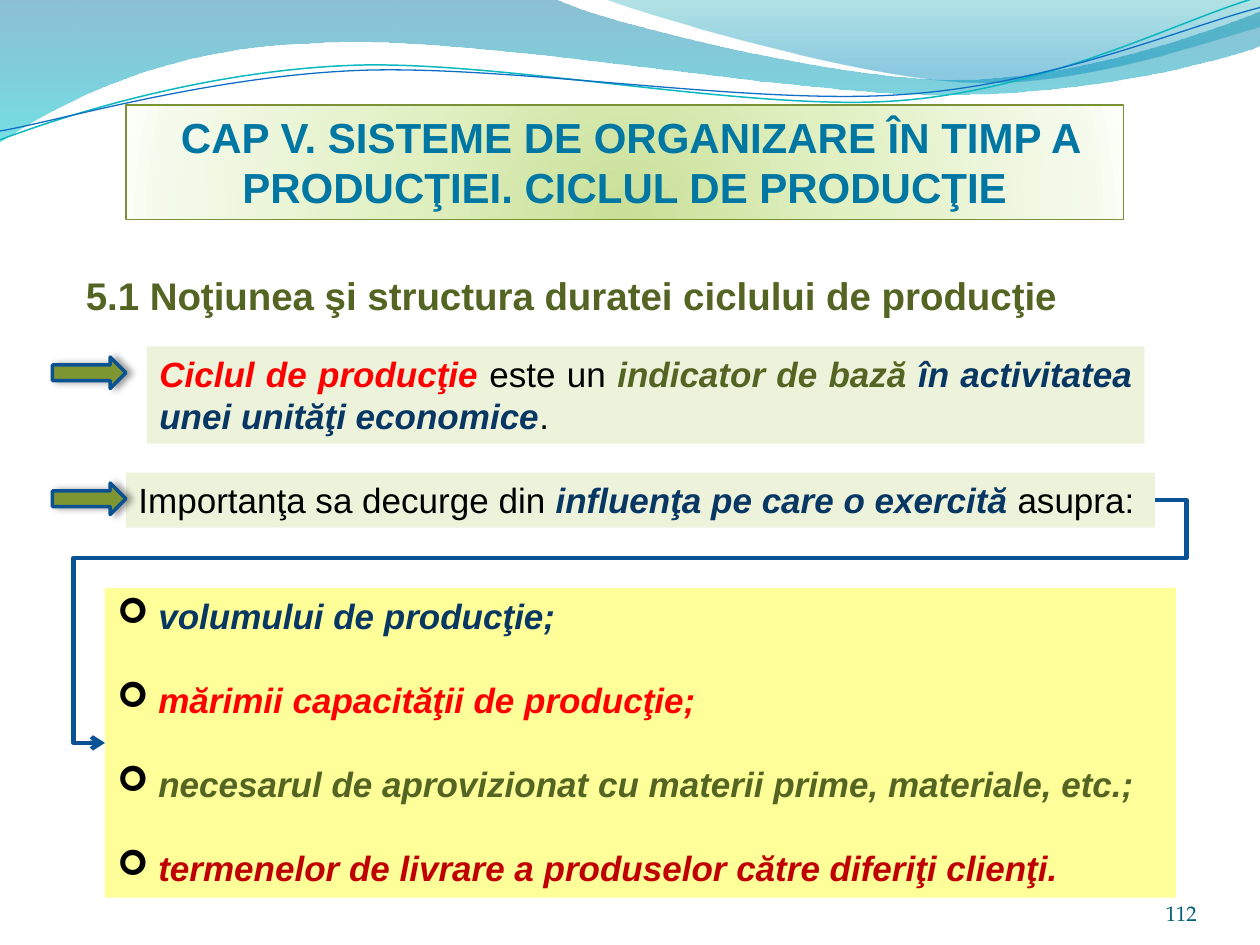
from dataclasses import dataclass

from lxml.etree import SubElement
from pptx import Presentation
from pptx.dml.color import RGBColor
from pptx.enum.shapes import MSO_CONNECTOR, MSO_SHAPE
from pptx.enum.text import MSO_ANCHOR, MSO_AUTO_SIZE, PP_ALIGN
from pptx.oxml import parse_xml
from pptx.oxml.ns import nsdecls, qn
from pptx.util import Inches, Pt


@dataclass(frozen=True)
class Theme:
    sans: str = "Arial"
    serif: str = "TeX Gyre Pagella"
    symbol: str = "Wingdings"
    title_size: int = 24
    heading_size: int = 22
    body_size: int = 20
    page_size: int = 12
    black: str = "000000"
    title: str = "0076A3"
    title_line: str = "7B9135"
    olive: str = "546422"
    navy: str = "083763"
    red: str = "FF0000"
    dark_red: str = "C00000"
    page: str = "045D75"
    panel: str = "EDF3DB"
    yellow: str = "FFFF99"
    arrow: str = "7E9632"
    arrow_line: str = "0B5292"
    connector: str = "095295"
    teal_line: str = "0AB8BF"
    blue_line: str = "0F6FC6"


THEME = Theme()
COLUMNS, ROWS = 120, 90
SLIDE_WIDTH, SLIDE_HEIGHT = Inches(10), Inches(7.5)
LINEAR_DOWN = '<a:lin ang="5400000" scaled="0"/>'
RADIAL = '<a:path path="circle"><a:fillToRect l="50000" t="130000" r="50000" b="-30000"/></a:path>'


@dataclass(frozen=True)
class Box:
    column: float
    row: float
    columns: float
    rows: float

    def point(self, across=0.0, down=0.0):
        return (
            round((self.column + across * self.columns) * SLIDE_WIDTH / COLUMNS),
            round((self.row + down * self.rows) * SLIDE_HEIGHT / ROWS),
        )

    @property
    def frame(self):
        left, top = self.point()
        right, bottom = self.point(1, 1)
        return left, top, right - left, bottom - top


def color(value):
    return RGBColor.from_string(value)


def set_gradient(shape, stops, direction):
    shape.fill.background()
    marks = "".join(
        f'<a:gs pos="{position * 1000}"><a:srgbClr val="{value}">'
        f'<a:alpha val="{alpha * 1000}"/></a:srgbClr></a:gs>'
        for position, value, alpha in stops
    )
    properties = shape._element.spPr
    gradient = parse_xml(
        f'<a:gradFill {nsdecls("a")} rotWithShape="1"><a:gsLst>{marks}</a:gsLst>{direction}</a:gradFill>'
    )
    properties.replace(properties.find(qn("a:noFill")), gradient)


def set_shadow(shape, value, alpha, blur, distance, angle):
    effects = shape._element.spPr.find(qn("a:effectLst"))
    shadow = SubElement(
        effects, qn("a:outerShdw"), blurRad=str(Pt(blur)), dist=str(Pt(distance)),
        dir=str(angle * 60000), algn="ctr", rotWithShape="0",
    )
    tint = SubElement(shadow, qn("a:srgbClr"), val=value)
    SubElement(tint, qn("a:alpha"), val=str(alpha * 1000))


def set_line(shape, value, width):
    shape.line.color.rgb = color(value)
    shape.line.width = Pt(width)


def add_panel(slide, box, fill=None, kind=MSO_SHAPE.RECTANGLE):
    shape = slide.shapes.add_shape(kind, *box.frame)
    shape.shadow.inherit = False
    shape.line.fill.background()
    if fill:
        shape.fill.solid()
        shape.fill.fore_color.rgb = color(fill)
    return shape


def open_text(shape):
    frame = shape.text_frame
    frame.word_wrap = True
    frame.auto_size = MSO_AUTO_SIZE.SHAPE_TO_FIT_TEXT
    frame.vertical_anchor = MSO_ANCHOR.TOP
    return frame


def write(paragraph, runs, size, alignment, font=THEME.sans):
    paragraph.alignment = alignment
    paragraph.font.size = Pt(size)
    paragraph.font.name = font
    for text, value, bold, italic in runs:
        run = paragraph.add_run()
        run.text = text
        run.font.color.rgb = color(value)
        run.font.bold = bold
        run.font.italic = italic


def add_outline(slide, box, points, straight=(), closed=False):
    places = [box.point(x / 10, y) for x, y in points]
    builder = slide.shapes.build_freeform(*places[0])
    builder.add_line_segments(places[1:], close=closed)
    shape = builder.convert_to_shape()
    segments = list(shape._element.iter(qn("a:lnTo")))
    index = 0
    while index < len(segments):
        if index + 1 in straight:
            index += 1
            continue
        curve = parse_xml(f'<a:cubicBezTo {nsdecls("a")}/>')
        segments[index].addprevious(curve)
        for segment in segments[index:index + 3]:
            curve.append(segment[0])
            segment.getparent().remove(segment)
        index += 3
    shape.shadow.inherit = False
    shape.fill.background()
    shape.line.fill.background()
    return shape


def add_waves(slide, box):
    band = [
        (0, 0), (4.4, -0.01), (4.76, 0.17), (6.64, 0.63), (7.58, 0.63), (8.53, 0.63), (9.58, 0.26),
        (10, 0.09), (10.01, 0.36), (9.83, 0.44), (8.7, 0.76), (7.46, 0.75), (6.22, 0.75),
        (3.82, 0.28), (2.57, 0.34), (1.29, 0.36), (0.46, 0.83), (-0.01, 1.13),
    ]
    corner = [(4.79, -0.01), (5.09, 0.11), (6.82, 0.62), (7.69, 0.65), (8.56, 0.69), (9.61, 0.32),
              (10, 0.21), (10, 0)]
    fills = (
        (band, (1, 8), [(0, "0074A1", 45), (100, "00C6CF", 55)]),
        (corner, (7,), [(0, "00A1A9", 30), (80, "008BBF", 45)]),
    )
    for points, straight, stops in fills:
        set_gradient(add_outline(slide, box, points, straight, True), stops, LINEAR_DOWN)
    strands = (
        ([(0, 1.11), (0.48, 0.93), (1.58, 0.57), (2.77, 0.52), (3.95, 0.47), (5.93, 0.89),
          (7.13, 0.8), (8.33, 0.71), (9.38, 0.15), (9.98, -0.02)], THEME.teal_line, 0.85),
        ([(0, 1.04), (0.47, 0.96), (1.64, 0.61), (2.83, 0.56), (4.03, 0.51), (5.97, 0.84),
          (7.17, 0.75), (8.36, 0.67), (9.41, 0.21), (10, 0.06)], THEME.blue_line, 0.75),
    )
    for points, value, width in strands:
        set_line(add_outline(slide, box, points), value, width)


def add_title(slide, box):
    shape = add_panel(slide, box)
    set_gradient(shape, [(0, "C9DF97", 100), (43, "E0F0C1", 100), (93, "F5FAEC", 100), (100, "FCFEF8", 100)], RADIAL)
    set_line(shape, THEME.title_line, 0.75)
    write(open_text(shape).paragraphs[0], [
        (" ", THEME.black, True, False),
        ("CAP V. SISTEME DE ORGANIZARE ÎN TIMP A PRODUCŢIEI. CICLUL DE PRODUCŢIE", THEME.title, True, False),
    ], THEME.title_size, PP_ALIGN.CENTER)


def add_heading(slide, box):
    paragraph = open_text(slide.shapes.add_textbox(*box.frame)).paragraphs[0]
    write(paragraph, [
        ("5.1", THEME.olive, True, False),
        (" ", THEME.black, True, False),
        ("Noţiunea şi structura duratei ciclului de producţie", THEME.olive, True, False),
    ], THEME.heading_size, PP_ALIGN.LEFT)
    gap = paragraph.runs[1].font
    gap.name, gap.size = THEME.serif, Pt(THEME.title_size)


def add_statement(slide, box, runs):
    frame = open_text(add_panel(slide, box, THEME.panel))
    write(frame.paragraphs[0], runs, THEME.body_size, PP_ALIGN.JUSTIFY)


def add_pointer(slide, box):
    shape = add_panel(slide, box, THEME.arrow, MSO_SHAPE.RIGHT_ARROW)
    set_line(shape, THEME.arrow_line, 2)
    set_shadow(shape, THEME.black, 40, 4, 3, 0)


def add_influences(slide, box, items):
    frame = open_text(add_panel(slide, box, THEME.yellow))
    for index, (text, value) in enumerate(items):
        paragraph = frame.paragraphs[0] if index == 0 else frame.add_paragraph()
        runs = [(" ", THEME.black, False, False), (text, value, True, True)]
        write(paragraph, runs, THEME.body_size, PP_ALIGN.JUSTIFY)
        paragraph.space_before = Pt(24 if index else 0)
        properties = paragraph._p.get_or_add_pPr()
        properties.set("marL", str(Inches(0.23)))
        properties.set("indent", str(-Inches(0.23)))
        defaults = properties.find(qn("a:defRPr"))
        for tag, value in (("buFont", f'typeface="{THEME.symbol}"'), ("buChar", 'char="➢"')):
            defaults.addprevious(parse_xml(f'<a:{tag} {nsdecls("a")} {value}/>'))


def add_link(slide, source, target):
    connector = slide.shapes.add_connector(MSO_CONNECTOR.ELBOW, *source.point(1, 0.5), *target.point(0, 0.5))
    set_line(connector, THEME.connector, 2.5)
    properties = connector._element.spPr
    geometry = properties.find(qn("a:prstGeom"))
    geometry.set("prst", "bentConnector5")
    guides = geometry.get_or_add_avLst()
    for number, value in enumerate((-3000, 23800, 103000), 1):
        SubElement(guides, qn("a:gd"), name=f"adj{number}", fmla=f"val {value}")
    SubElement(properties.find(qn("a:ln")), qn("a:tailEnd"), type="arrow")
    SubElement(properties, qn("a:effectLst"))


def add_page_number(slide, box):
    frame = slide.shapes.add_textbox(*box.frame).text_frame
    frame.margin_left = frame.margin_right = frame.margin_top = frame.margin_bottom = 0
    frame.vertical_anchor = MSO_ANCHOR.BOTTOM
    frame.word_wrap = True
    write(frame.paragraphs[0], [("112", THEME.page, False, False)], THEME.page_size, PP_ALIGN.RIGHT, THEME.serif)


def main():
    presentation = Presentation()
    presentation.slide_width, presentation.slide_height = SLIDE_WIDTH, SLIDE_HEIGHT
    slide = presentation.slides.add_slide(presentation.slide_layouts[6])
    importance = Box(12, 45, 98, 5.25)
    influences = Box(10, 56, 102, 29.5)
    add_waves(slide, Box(0, 0, COLUMNS, 12))
    add_page_number(slide, Box(104, 83.4, 10, 4.8))
    add_title(slide, Box(12, 10, 95, 10.9))
    add_heading(slide, Box(7, 25, 107, 6))
    add_statement(slide, Box(14, 33, 95, 9.25), [
        ("Ciclul de producţie ", THEME.red, True, True),
        ("este un ", THEME.black, False, False),
        ("indicator de bază ", THEME.olive, True, True),
        ("în activitatea unei unităţi economice", THEME.navy, True, True),
        (".", THEME.black, False, False),
    ])
    add_pointer(slide, Box(5, 34, 7, 3))
    add_influences(slide, influences, [
        ("volumului de producţie;", THEME.navy),
        ("mărimii capacităţii de producţie;", THEME.red),
        ("necesarul de aprovizionat cu materii prime, materiale, etc.;", THEME.olive),
        ("termenelor de livrare a produselor către diferiţi clienţi.", THEME.dark_red),
    ])
    add_statement(slide, importance, [
        ("Importanţa sa decurge din ", THEME.black, False, False),
        ("influenţa pe care o exercită ", THEME.navy, True, True),
        ("asupra:", THEME.black, False, False),
    ])
    add_pointer(slide, Box(5, 46, 7, 3))
    add_link(slide, importance, influences)
    presentation.save("out.pptx")


if __name__ == "__main__":
    main()
